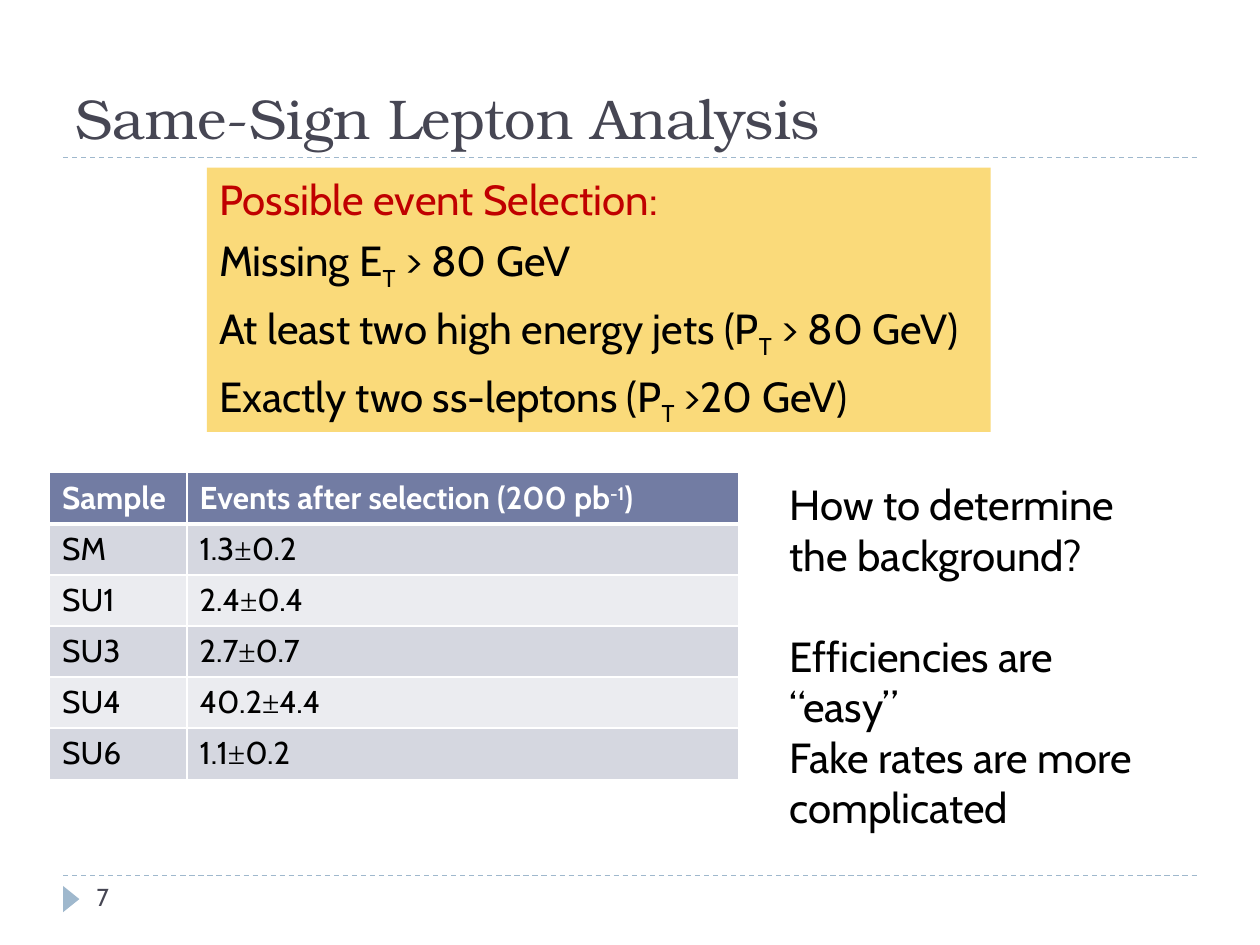
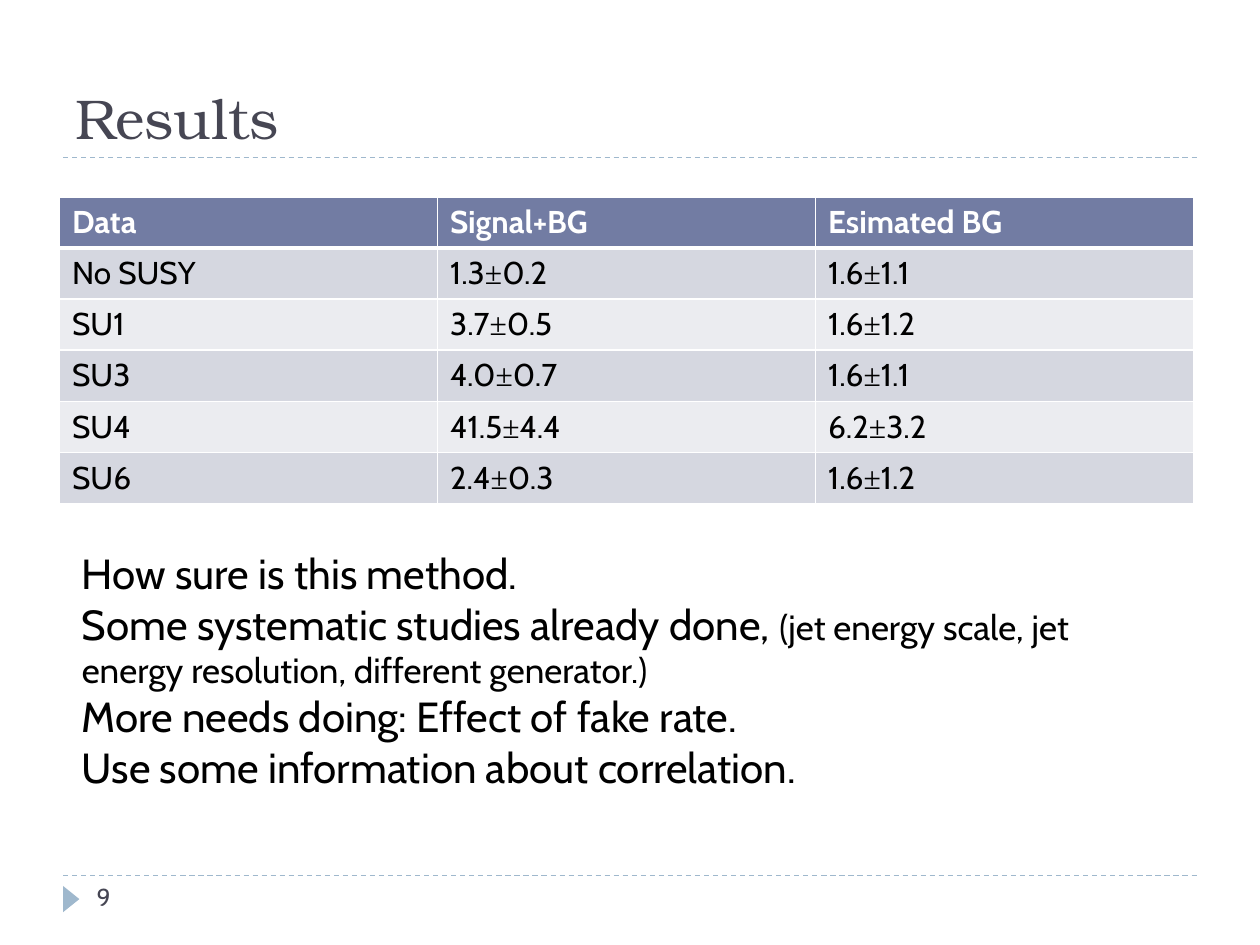
from lxml import etree
from pptx import Presentation
from pptx.dml.color import RGBColor
from pptx.enum.dml import MSO_LINE
from pptx.enum.shapes import MSO_CONNECTOR, MSO_SHAPE
from pptx.enum.text import MSO_ANCHOR, MSO_AUTO_SIZE, PP_ALIGN
from pptx.oxml.ns import qn
from pptx.util import Cm, Pt

STRAIGHT = MSO_CONNECTOR.STRAIGHT
TRIANGLE = MSO_SHAPE.ISOSCELES_TRIANGLE
RECTANGLE = MSO_SHAPE.RECTANGLE
DASH = MSO_LINE.DASH
LEFT = PP_ALIGN.LEFT
TOP, BOTTOM = MSO_ANCHOR.TOP, MSO_ANCHOR.BOTTOM
NO_AUTOFIT = MSO_AUTO_SIZE.NONE

COLORS = {
    "title": "464653",
    "accent": "9FB8CD",
    "text": "000000",
    "heading": "C00000",
    "panel": "FADA7A",
    "header": "727CA3",
    "band_dark": "D5D7E0",
    "band_light": "EBECF0",
    "white": "FFFFFF",
}
TITLE_FONT, BODY_FONT, SYMBOL_FONT = "TeX Gyre Bonum", "Cabin", "Times New Roman"
TITLE_ONLY = 5
SUBSCRIPT, SUPERSCRIPT = -25, 30
RULE_LEFT, RULE_RIGHT = 1.27, 24.13
HEADER_RULE, FOOTER_RULE = 3.18, 17.65
ROW_HEIGHT = 1.03


def rgb(name):
    return RGBColor.from_string(COLORS[name])


def add_run(paragraph, text, size, color="text", font=BODY_FONT, bold=False, baseline=0):
    run = paragraph.add_run()
    run.text = text
    run.font.name = font
    run.font.size = Pt(size)
    run.font.bold = bold
    run.font.color.rgb = rgb(color)
    if baseline:
        run._r.get_or_add_rPr().set("baseline", str(baseline * 1000))


def fill_text(text_frame, paragraphs):
    """Each paragraph is (space before in points, list of (text, run options))."""
    text_frame.word_wrap = True
    text_frame.vertical_anchor = TOP
    for index, (space_before, runs) in enumerate(paragraphs):
        paragraph = text_frame.paragraphs[0] if index == 0 else text_frame.add_paragraph()
        paragraph.alignment = LEFT
        paragraph.space_before = Pt(space_before)
        for text, options in runs:
            add_run(paragraph, text, **{"size": 24, **options})


def add_text(slide, box, paragraphs):
    shape = slide.shapes.add_textbox(*map(Cm, box))
    fill_text(shape.text_frame, paragraphs)


def add_plain_shape(slide, preset, box, color):
    shape = slide.shapes.add_shape(preset, *map(Cm, box))
    shape.shadow.inherit = False
    shape.fill.solid()
    shape.fill.fore_color.rgb = rgb(color)
    shape.line.fill.background()
    return shape


def add_rule(slide, top):
    rule = slide.shapes.add_connector(STRAIGHT, Cm(RULE_LEFT), Cm(top), Cm(RULE_RIGHT), Cm(top))
    rule.line.color.rgb = rgb("accent")
    rule.line.width = Pt(0.75)
    rule.line.dash_style = DASH
    etree.SubElement(rule._element.spPr, qn("a:effectLst"))


def add_framed_slide(presentation, title, number):
    """Slide with title, dashed rules, and footer marker with page number."""
    slide = presentation.slides.add_slide(presentation.slide_layouts[TITLE_ONLY])

    # Title
    placeholder = slide.shapes.title
    placeholder.left, placeholder.top = Cm(RULE_LEFT), Cm(0.43)
    placeholder.width, placeholder.height = Cm(RULE_RIGHT - RULE_LEFT), Cm(2.74)
    text_frame = placeholder.text_frame
    text_frame.auto_size = NO_AUTOFIT
    text_frame.vertical_anchor = BOTTOM
    text_frame.paragraphs[0].alignment = LEFT
    add_run(text_frame.paragraphs[0], title, 32, "title", TITLE_FONT)

    # Rules and footer
    for top in (FOOTER_RULE, HEADER_RULE):
        add_rule(slide, top)
    marker = add_plain_shape(slide, TRIANGLE, (1.17, 17.96, 0.53, 0.33), "accent")
    marker.rotation = 90
    add_text(slide, (1.7, FOOTER_RULE, 5.5, 1.02),
             [(0, [(str(number), {"size": 14, "color": "title"})])])
    return slide


def set_borders(cell, row):
    """White cell grid with a thick edge below the header row."""
    widths = {"L": 1, "R": 1, "T": 3 if row == 1 else 1, "B": 3 if row == 0 else 1}
    properties = cell._tc.get_or_add_tcPr()
    for side, width in widths.items():
        line = etree.SubElement(properties, qn(f"a:ln{side}"), w=str(Pt(width)))
        fill = etree.SubElement(line, qn("a:solidFill"))
        etree.SubElement(fill, qn("a:srgbClr"), val=COLORS["white"])


def fill_cell(cell, row, content):
    set_borders(cell, row)
    cell.fill.solid()
    band = "header" if row == 0 else "band_dark" if row % 2 else "band_light"
    cell.fill.fore_color.rgb = rgb(band)
    paragraph = cell.text_frame.paragraphs[0]
    if row == 0:
        for text, baseline in content:
            add_run(paragraph, text, 18, "white", bold=True, baseline=baseline)
        return
    value, sign, error = content.partition("±")
    for text, font in ((value, BODY_FONT), (sign, SYMBOL_FONT), (error, BODY_FONT)):
        if text:
            add_run(paragraph, text, 18, font=font)


def add_results_table(slide, left, top, column_widths, rows):
    frame = slide.shapes.add_table(len(rows), len(column_widths), Cm(left), Cm(top),
                                   Cm(sum(column_widths)), Cm(ROW_HEIGHT * len(rows)))
    table = frame.table
    for column, width in zip(table.columns, column_widths):
        column.width = Cm(width)
    for row, contents in enumerate(rows):
        for column, content in enumerate(contents):
            fill_cell(table.cell(row, column), row, content)


def add_selection_panel(slide, box):
    def cut(before, after):
        return (6, [(before, {}), ("T", {"baseline": SUBSCRIPT}), (after, {})])

    panel = add_plain_shape(slide, RECTANGLE, box, "panel")
    fill_text(panel.text_frame, [
        (6, [("Possible event Selection:", {"color": "heading"})]),
        cut("Missing E", " > 80 GeV"),
        cut("At least two high energy jets (P", " > 80 GeV)"),
        cut("Exactly two ss-leptons (P", " >20 GeV)"),
    ])


def build_analysis_slide(presentation):
    slide = add_framed_slide(presentation, "Same-Sign Lepton Analysis", 7)
    add_selection_panel(slide, (4.17, 3.38, 15.8, 5.33))
    add_results_table(slide, 1, 9.53, (2.77, 11.13), [
        ([("Sample", 0)],
         [("Events after selection (200 pb", 0), ("-1", SUPERSCRIPT), (")", 0)]),
        ("SM", "1.3±0.2"),
        ("SU1", "2.4±0.4"),
        ("SU3", "2.7±0.7"),
        ("SU4", "40.2±4.4"),
        ("SU6", "1.1±0.2"),
    ])
    # Questions beside the table
    add_text(slide, (15.67, 9.53, 8.13, 7.19), [
        (0, [("How to determine the background?", {})]),
        (29, [("Efficiencies are “easy”", {})]),
        (0, [("Fake rates are more complicated", {})]),
    ])


def build_results_slide(presentation):
    slide = add_framed_slide(presentation, "Results", 9)
    add_results_table(slide, 1.2, 3.97, (7.62,) * 3, [
        [[(heading, 0)] for heading in ("Data", "Signal+BG", "Esimated BG")],
        ("No SUSY", "1.3±0.2", "1.6±1.1"),
        ("SU1", "3.7±0.5", "1.6±1.2"),
        ("SU3", "4.0±0.7", "1.6±1.1"),
        ("SU4", "41.5±4.4", "6.2±3.2"),
        ("SU6", "2.4±0.3", "1.6±1.2"),
    ])
    # Remarks below the table
    add_text(slide, (1.4, 10.92, 21.82, 5.21), [
        (0, [("How sure is this method.", {})]),
        (0, [("Some systematic studies already done, ", {}),
             ("(jet energy scale, jet energy resolution, different generator.)", {"size": 20})]),
        (0, [("More needs doing: Effect of fake rate.", {})]),
        (0, [("Use some information about correlation.", {})]),
    ])


def main():
    presentation = Presentation()
    presentation.slide_width, presentation.slide_height = Cm(25.4), Cm(19.05)
    build_analysis_slide(presentation)
    build_results_slide(presentation)
    presentation.save("out.pptx")


if __name__ == "__main__":
    main()
